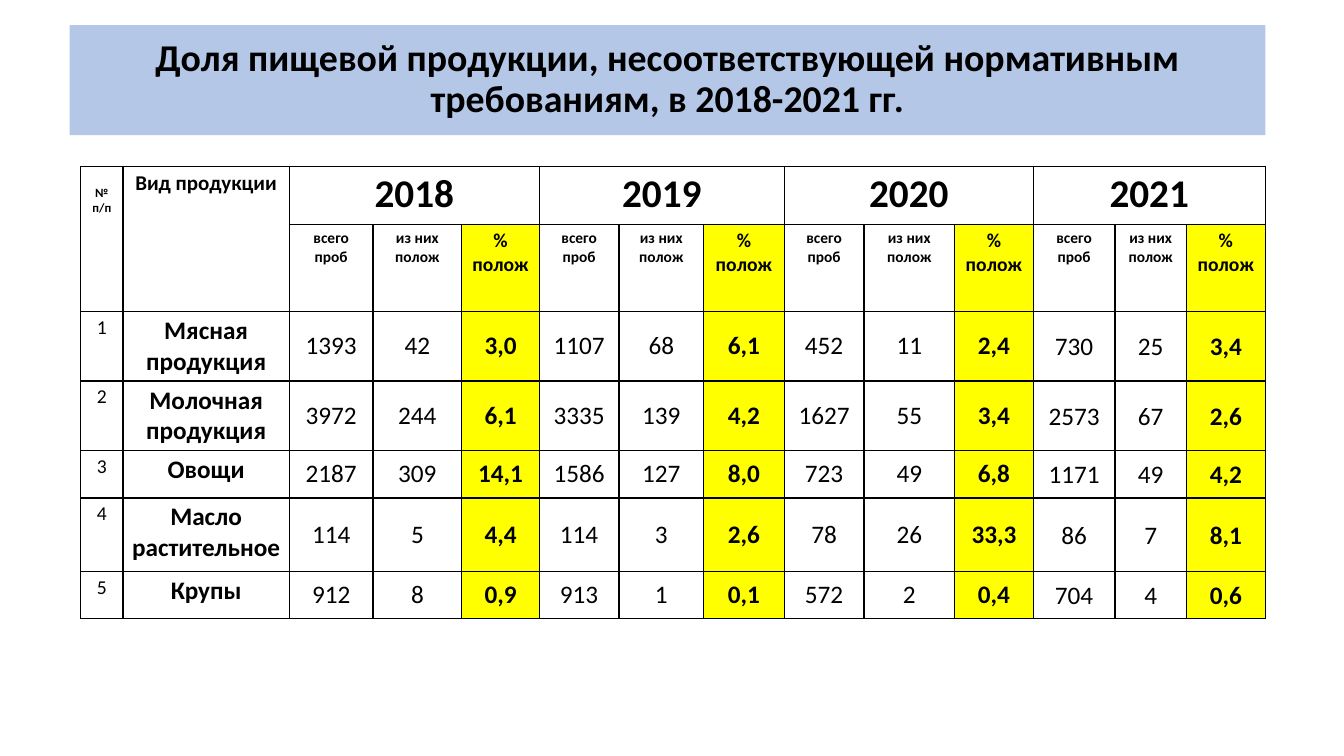
from dataclasses import dataclass

from lxml import etree
from pptx import Presentation
from pptx import util as u
from pptx.dml.color import RGBColor
from pptx.enum import shapes, text
from pptx.oxml import ns


@dataclass(frozen=True)
class Theme:
    font: str = "Calibri"
    ink: str = "000000"
    paper: str = "FFFFFF"
    banner: str = "B4C7E7"
    accent: str = "FFFF00"
    title: float = 27
    year: float = 28
    value: float = 18
    product: float = 15
    number: float = 14
    share: float = 14
    count: float = 11
    index: float = 9


theme = Theme()
PX = 9144


def write(tf, words, size, bold, spacing=None):
    tf.word_wrap = True
    p = tf.paragraphs[0]
    p.text = words
    p.alignment = text.PP_ALIGN.CENTER
    p.line_spacing = spacing
    p.font.name = theme.font
    p.font.size = u.Pt(size)
    p.font.bold = bold
    p.font.color.rgb = RGBColor.from_string(theme.ink)


def add_borders(cell):
    tc_pr = cell._tc.get_or_add_tcPr()
    for side in ("lnL", "lnR", "lnT", "lnB"):
        ln = etree.SubElement(tc_pr, ns.qn(f"a:{side}"), w=str(u.Pt(1)))
        fill = etree.SubElement(ln, ns.qn("a:solidFill"))
        etree.SubElement(fill, ns.qn("a:srgbClr"), val=theme.ink)


years = ["2018", "2019", "2020", "2021"]
measures = ["всего проб", "из них полож", "% полож"]
products = [
    ("Мясная продукция", "1393 42 3,0 1107 68 6,1 452 11 2,4 730 25 3,4"),
    ("Молочная продукция", "3972 244 6,1 3335 139 4,2 1627 55 3,4 2573 67 2,6"),
    ("Овощи", "2187 309 14,1 1586 127 8,0 723 49 6,8 1171 49 4,2"),
    ("Масло растительное", "114 5 4,4 114 3 2,6 78 26 33,3 86 7 8,1"),
    ("Крупы", "912 8 0,9 913 1 0,1 572 2 0,4 704 4 0,6"),
]
col_widths = [42, 165, 83, 88, 77, 79, 84, 80, 79, 90, 78, 81, 71, 78]
row_heights = [58, 86, 69, 69, 47, 73, 47]
last_year_col = len(col_widths) - len(measures)

prs = Presentation()
prs.slide_width = 1333 * PX
prs.slide_height = 750 * PX
s = prs.slides.add_slide(prs.slide_layouts[6])

banner = s.shapes.add_shape(
    shapes.MSO_SHAPE.RECTANGLE, 69 * PX, 25 * PX, 1186 * PX, 109 * PX
)
banner.shadow.inherit = False
banner.fill.solid()
banner.fill.fore_color.rgb = RGBColor.from_string(theme.banner)
banner.line.fill.background()
banner.text_frame.vertical_anchor = text.MSO_ANCHOR.MIDDLE
write(
    banner.text_frame,
    "Доля пищевой продукции, несоответствующей нормативным требованиям, в 2018-2021 гг.",
    theme.title, True, 0.9,
)

table = s.shapes.add_table(
    len(row_heights), len(col_widths), 80 * PX, 165 * PX,
    sum(col_widths) * PX, sum(row_heights) * PX,
).table
table.first_row = False
table.horz_banding = False
for column, width in zip(table.columns, col_widths):
    column.width = width * PX
for row, height in zip(table.rows, row_heights):
    row.height = height * PX

for r in range(len(row_heights)):
    for c in range(len(col_widths)):
        cell = table.cell(r, c)
        is_share = r > 0 and c > 1 and (c - 2) % len(measures) == 2
        is_value = r > 1 and c > 1
        is_last_year = is_value and c >= last_year_col
        add_borders(cell)
        cell.fill.solid()
        cell.fill.fore_color.rgb = RGBColor.from_string(
            theme.accent if is_share else theme.paper
        )
        cell.margin_left = cell.margin_right = (6 if is_last_year else 7) * PX
        cell.margin_top = cell.margin_bottom = (0 if is_last_year else 4) * PX
        if is_value:
            cell.vertical_anchor = text.MSO_ANCHOR.MIDDLE

for c in (0, 1):
    table.cell(0, c).merge(table.cell(1, c))
table.cell(0, 0).margin_top = 19 * PX
write(table.cell(0, 0).text_frame, "№ п/п", theme.index, True)
write(table.cell(0, 1).text_frame, "Вид продукции", theme.product, True)

for i, year in enumerate(years):
    first = 2 + i * len(measures)
    table.cell(0, first).merge(table.cell(0, first + len(measures) - 1))
    write(table.cell(0, first).text_frame, year, theme.year, True)
    for j, measure in enumerate(measures):
        size = theme.share if j == 2 else theme.count
        write(table.cell(1, first + j).text_frame, measure, size, True)

for r, (product, values) in enumerate(products, start=2):
    write(table.cell(r, 0).text_frame, str(r - 1), theme.number, False)
    write(table.cell(r, 1).text_frame, product, theme.value, True)
    for c, value in enumerate(values.split(), start=2):
        spacing = 1.07 if c >= last_year_col else None
        is_share = (c - 2) % len(measures) == 2
        write(table.cell(r, c).text_frame, value, theme.value, is_share, spacing)

prs.save("out.pptx")
